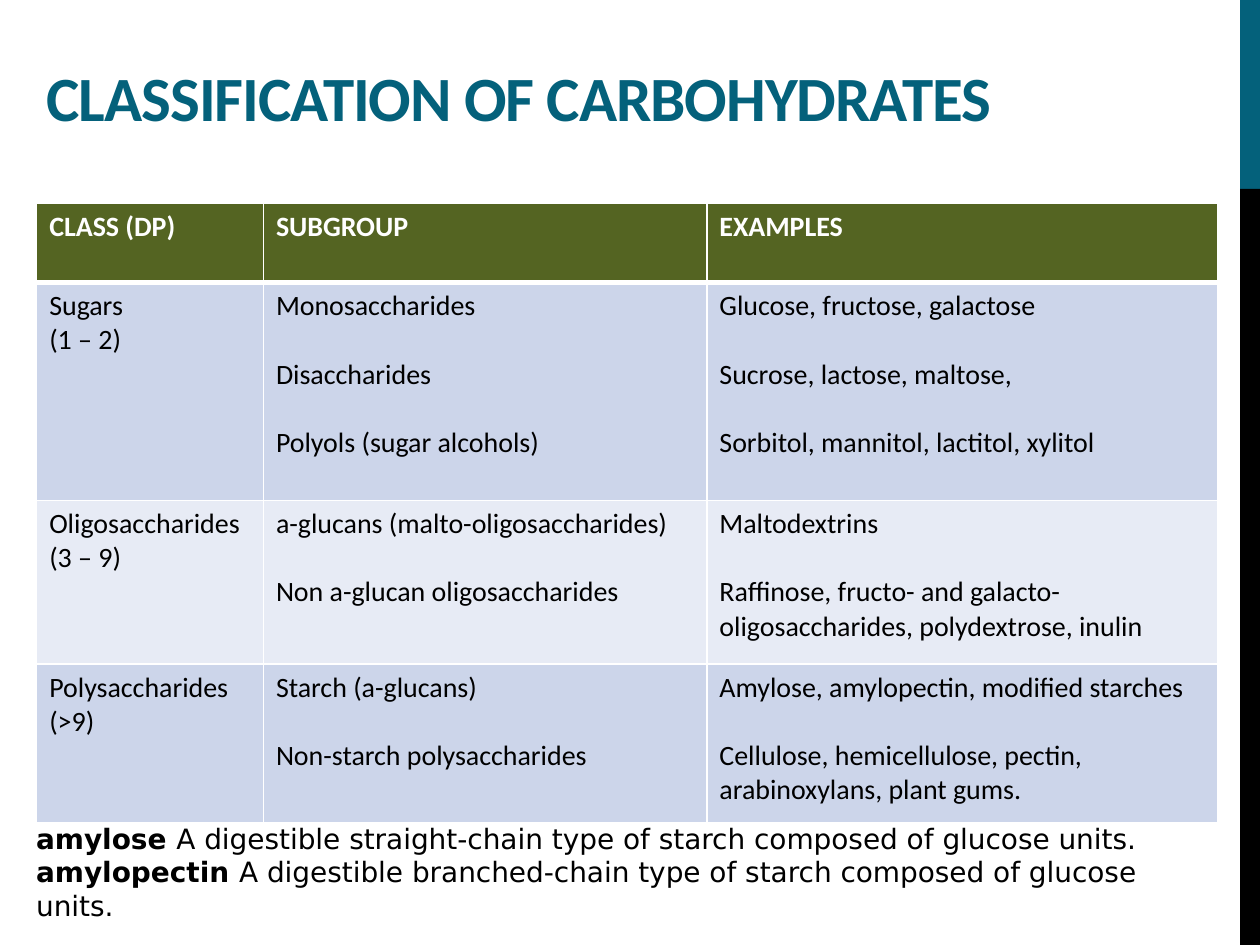
from lxml import etree
from pptx import Presentation
from pptx.dml.color import RGBColor
from pptx.enum.shapes import MSO_SHAPE
from pptx.enum.text import MSO_ANCHOR
from pptx.oxml.ns import qn
from pptx.util import Cm, Pt

TEAL, OLIVE, BLACK, WHITE = "04617B", "546422", "000000", "FFFFFF"
BANDS = ("CCD5EA", "E7EBF5")
BLANK_LINE = 19.5

COLUMN_WIDTHS = (4.57, 8.94, 10.29)
ROW_HEIGHTS = (1.6, 4.39, 3.3, 3.2)
HEADINGS = ("CLASS (DP)", "SUBGROUP", "EXAMPLES")
CLASSES = (
    (("Sugars", "(1 – 2)"),
     ("Monosaccharides", "Disaccharides", "Polyols (sugar alcohols)"),
     ("Glucose, fructose, galactose", "Sucrose, lactose, maltose,",
      "Sorbitol, mannitol, lactitol, xylitol")),
    (("Oligosaccharides", "(3 – 9)"),
     ("a-glucans (malto-oligosaccharides)", "Non a-glucan oligosaccharides"),
     ("Maltodextrins",
      "Raffinose, fructo- and galacto-oligosaccharides, polydextrose, inulin")),
    (("Polysaccharides", "(>9)"),
     ("Starch (a-glucans)", "Non-starch polysaccharides"),
     ("Amylose, amylopectin, modified starches",
      "Cellulose, hemicellulose, pectin, arabinoxylans, plant gums.")),
)
DEFINITIONS = (
    ("amylose ", "A digestible straight-chain type of starch composed of glucose units."),
    ("amylopectin ", "A digestible branched-chain type of starch composed of glucose units."),
)


def color(hex_code):
    return RGBColor.from_string(hex_code)


def write(frame, paragraphs, size=16, font="Calibri", fill=BLACK, bold=False,
          gap=0, spacing=None):
    """Write paragraphs, each a tuple of runs; bold="first" marks the first run only."""
    frame.word_wrap = True
    for index, runs in enumerate(paragraphs):
        paragraph = frame.paragraphs[0] if index == 0 else frame.add_paragraph()
        paragraph.space_before = Pt(gap if index else 0)
        for position, words in enumerate(runs):
            run = paragraph.add_run()
            run.text = words
            run.font.size = Pt(size)
            run.font.name = font
            run.font.color.rgb = color(fill)
            run.font.bold = position == 0 if bold == "first" else bold
            if spacing is not None:
                run.font._element.set("spc", str(spacing))


def add_text(slide, box, paragraphs, anchor=MSO_ANCHOR.TOP, **text_format):
    frame = slide.shapes.add_textbox(*map(Cm, box)).text_frame
    frame.vertical_anchor = anchor
    write(frame, paragraphs, **text_format)


def add_side_bar(slide, left, top, width, height):
    accent_height = height * 0.2
    for offset, length, fill in ((0, accent_height, TEAL),
                                 (accent_height, height - accent_height, BLACK)):
        bar = slide.shapes.add_shape(MSO_SHAPE.RECTANGLE, Cm(left), Cm(top + offset),
                                     Cm(width), Cm(length))
        bar.shadow.inherit = False
        bar.fill.solid()
        bar.fill.fore_color.rgb = color(fill)
        bar.line.fill.background()


def set_borders(cell, **widths):
    properties = cell._tc.get_or_add_tcPr()
    for index, (side, width) in enumerate(widths.items()):
        line = etree.Element(qn(f"a:ln{side}"), w=str(Pt(width)))
        fill = etree.SubElement(line, qn("a:solidFill"))
        etree.SubElement(fill, qn("a:srgbClr"), val=WHITE)
        properties.insert(index, line)


def fill_cell(cell, paragraphs, background, top=1, bottom=1, **text_format):
    cell.fill.solid()
    cell.fill.fore_color.rgb = color(background)
    set_borders(cell, L=1, R=1, T=top, B=bottom)
    write(cell.text_frame, [(line,) for line in paragraphs], **text_format)


def add_class_table(slide, left, top):
    table = slide.shapes.add_table(
        len(ROW_HEIGHTS), len(COLUMN_WIDTHS), Cm(left), Cm(top),
        Cm(sum(COLUMN_WIDTHS)), Cm(sum(ROW_HEIGHTS))).table
    for column, width in zip(table.columns, COLUMN_WIDTHS):
        column.width = Cm(width)
    for row, height in zip(table.rows, ROW_HEIGHTS):
        row.height = Cm(height)
    for column, heading in enumerate(HEADINGS):
        fill_cell(table.cell(0, column), (heading,), OLIVE, bottom=3,
                  fill=WHITE, bold=True)
    for row, entries in enumerate(CLASSES, start=1):
        for column, lines in enumerate(entries):
            fill_cell(table.cell(row, column), lines, BANDS[(row - 1) % 2],
                      top=3 if row == 1 else 1, gap=BLANK_LINE if column else 0)


def main():
    presentation = Presentation()
    presentation.slide_width, presentation.slide_height = Cm(25.4), Cm(19.05)
    slide = presentation.slides.add_slide(presentation.slide_layouts[6])
    add_side_bar(slide, 25, 0, 0.4, 19.05)
    add_text(slide, (0.69, -0.36, 22.86, 3.18), [("CLASSIFICATION OF CARBOHYDRATES",)],
             anchor=MSO_ANCHOR.BOTTOM, size=36, fill=TEAL, bold=True, spacing=-60)
    add_class_table(slide, 0.74, 4.1)
    add_text(slide, (0.48, 16.43, 23.85, 2.31), DEFINITIONS,
             font="DejaVu Sans", bold="first")
    presentation.save("out.pptx")


if __name__ == "__main__":
    main()
